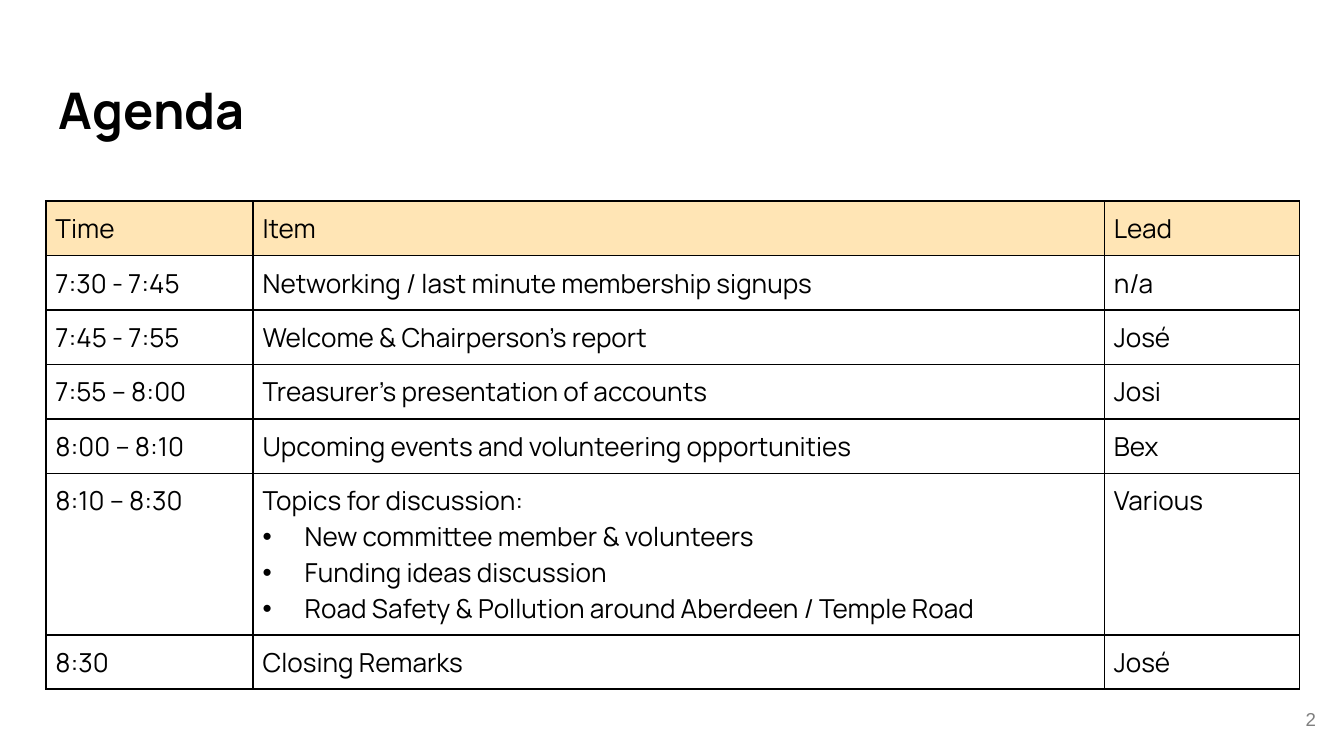
from lxml import etree
from pptx import Presentation
from pptx.dml.color import RGBColor
from pptx.enum.text import MSO_ANCHOR, PP_ALIGN
from pptx.oxml.ns import qn
from pptx.util import Pt

TOP, MIDDLE = MSO_ANCHOR.TOP, MSO_ANCHOR.MIDDLE
LEFT, RIGHT = PP_ALIGN.LEFT, PP_ALIGN.RIGHT
COLORS = {"ink": "000000", "head": "FFE5B5", "number": "7F7F7F"}
BODY = "Manrope"
COLS = (111, 456, 104.5)
LINE, PAD, INDENT = 19.1, 5.04, 22.5
ROWS = (
    ("Time", "Item", "Lead"),
    ("7:30 - 7:45", "Networking / last minute membership signups", "n/a"),
    ("7:45 - 7:55", "Welcome & Chairperson’s report", "José"),
    ("7:55 – 8:00", "Treasurer’s presentation of accounts", "Josi"),
    ("8:00 – 8:10", "Upcoming events and volunteering opportunities", "Bex"),
    ("8:10 – 8:30",
     "Topics for discussion:\n"
     "New committee member & volunteers\n"
     "Funding ideas discussion\n"
     "Road Safety & Pollution around Aberdeen / Temple Road",
     "Various"),
    ("8:30", "Closing Remarks", "José"),
)


def style(para, size, face=BODY, color="ink", bold=False):
    """Format every run of a paragraph."""
    for run in para.runs:
        font = run.font
        font.size, font.name, font.bold = Pt(size), face, bold
        font.color.rgb = RGBColor.from_string(COLORS[color])


def add_label(slide, text, box, anchor, align, **look):
    """Add a wrapped text box with one styled paragraph."""
    frame = slide.shapes.add_textbox(*map(Pt, box)).text_frame
    frame.word_wrap = True
    frame.vertical_anchor = anchor
    frame.margin_left = frame.margin_right = Pt(7.2)
    frame.margin_top = frame.margin_bottom = Pt(7.2)
    frame.text = text
    para = frame.paragraphs[0]
    para.alignment = align
    style(para, **look)


def add_bullet(para):
    """Give a paragraph a hanging round bullet."""
    props = para._p.get_or_add_pPr()
    props.set("marL", str(Pt(INDENT)))
    props.set("indent", str(-Pt(INDENT)))
    tint = etree.SubElement(props, qn("a:buClr"))
    etree.SubElement(tint, qn("a:srgbClr"), val=COLORS["ink"])
    etree.SubElement(props, qn("a:buFont"), typeface="Arial")
    etree.SubElement(props, qn("a:buChar"), char="•")


def add_edges(cell):
    """Draw a thin line on all four sides of a cell."""
    props = cell._tc.get_or_add_tcPr()
    for side in ("lnL", "lnR", "lnT", "lnB"):
        line = etree.SubElement(props, qn(f"a:{side}"), w=str(Pt(1)))
        fill = etree.SubElement(line, qn("a:solidFill"))
        etree.SubElement(fill, qn("a:srgbClr"), val=COLORS["ink"])


def fill_cell(cell, text, head):
    """Set the text, edges and fill of a cell."""
    cell.margin_left = cell.margin_right = Pt(PAD)
    cell.margin_top = cell.margin_bottom = Pt(PAD)
    add_edges(cell)
    if head:
        cell.fill.solid()
        cell.fill.fore_color.rgb = RGBColor.from_string(COLORS["head"])
    else:
        cell.fill.background()
    cell.text_frame.text = text
    for i, para in enumerate(cell.text_frame.paragraphs):
        if i:
            add_bullet(para)
        style(para, 14)


def add_agenda(slide):
    """Add the agenda table, with rows as tall as their text."""
    tall = [2 * PAD + LINE * (1 + row[1].count("\n")) for row in ROWS]
    box = map(Pt, (24.7, 107.8, sum(COLS), sum(tall)))
    table = slide.shapes.add_table(len(ROWS), len(COLS), *box).table
    table.first_row = table.horz_banding = False
    for col, width in zip(table.columns, COLS):
        col.width = Pt(width)
    for r, row in enumerate(ROWS):
        table.rows[r].height = Pt(tall[r])
        for c, text in enumerate(row):
            fill_cell(table.cell(r, c), text, r == 0)


def main():
    """Build the agenda slide."""
    deck = Presentation()
    deck.slide_width, deck.slide_height = Pt(720), Pt(405)
    slide = deck.slides.add_slide(deck.slide_layouts[6])
    add_label(slide, "Agenda", (24.5, 35, 671, 49), TOP, LEFT,
              size=27, bold=True)
    add_agenda(slide)
    add_label(slide, "2", (669, 369.5, 43, 31), MIDDLE, RIGHT,
              size=10, face="Arial", color="number")
    deck.save("out.pptx")


if __name__ == "__main__":
    main()
